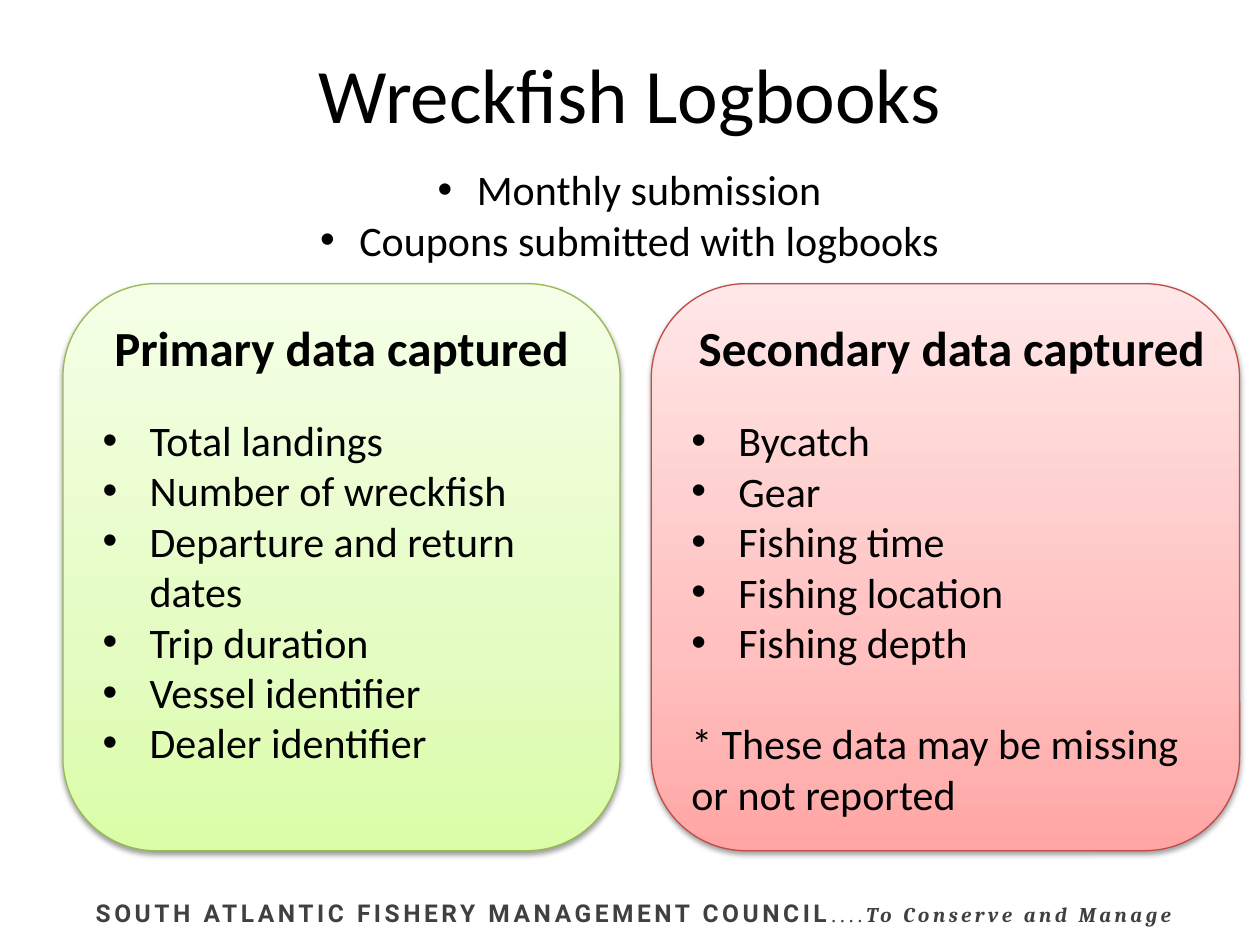
from pptx import Presentation
from pptx import util as u
from pptx.dml.color import RGBColor
from pptx.enum import shapes, text
from pptx.oxml import parse_xml
from pptx.oxml.ns import nsdecls, qn

TITLE = "Wreckfish Logbooks"
SUBMISSION = ["Monthly submission", "Coupons submitted with logbooks"]
PANELS = [
    dict(heading="Primary data captured",
         items=["Total landings", "Number of wreckfish", "Departure and return dates",
                "Trip duration", "Vessel identifier", "Dealer identifier"],
         note=None, left=1.27, width=11.23, right_inset=0.25, border="98B955",
         shades=[(0, "DAFDA7"), (35, "E4FCC2"), (100, "F5FFE7")]),
    dict(heading="Secondary data captured",
         items=["Bycatch", "Gear", "Fishing time", "Fishing location", "Fishing depth"],
         note="* These data may be missing or not reported",
         left=13.13, width=11.86, right_inset=0, border="BF4C48",
         shades=[(0, "FFA6A5"), (35, "FFC0BF"), (100, "FFE7E7")]),
]
MOTTO = [
    ("SOUTH ATLANTIC FISHERY MANAGEMENT COUNCIL", "Roboto", 14, True, False),
    ("....", "Times New Roman", 12, False, False),
    ("To Conserve and Manage", "Cambria", 12, True, True),
]
PANEL_TOP, PANEL_HEIGHT = 5.72, 11.43


def rgb(value):
    return RGBColor.from_string(value)


def box(left, top, width, height):
    return u.Cm(left), u.Cm(top), u.Cm(width), u.Cm(height)


def add_run(paragraph, words, size, font="Calibri", color="000000", bold=False, italic=False):
    run = paragraph.add_run()
    run.text = words
    run.font.name, run.font.size = font, u.Pt(size)
    run.font.bold, run.font.italic = bold, italic
    run.font.color.rgb = rgb(color)
    return run


def next_paragraph(frame, align=text.PP_ALIGN.LEFT, space=0):
    first = frame.paragraphs[0]
    paragraph = frame.add_paragraph() if first.runs else first
    paragraph.alignment = align
    if space:
        paragraph.space_before = u.Pt(space)
    return paragraph


def add_bullets(frame, items, indent, align=text.PP_ALIGN.LEFT, space=0):
    for index, item in enumerate(items):
        paragraph = next_paragraph(frame, align, 0 if index else space)
        props = paragraph._p.get_or_add_pPr()
        props.set("marL", str(u.Cm(indent)))
        props.set("indent", str(-u.Cm(indent)))
        props.append(parse_xml(f'<a:buFont {nsdecls("a")} typeface="Arial"/>'))
        props.append(parse_xml(f'<a:buChar {nsdecls("a")} char="•"/>'))
        add_run(paragraph, item, 24)


def add_text_box(slide, *place):
    frame = slide.shapes.add_textbox(*box(*place)).text_frame
    frame.word_wrap = True
    return frame


def shade(panel, shades):
    panel.fill.gradient()
    panel.fill.gradient_angle = 90
    stops = panel._element.spPr.find(f'{qn("a:gradFill")}/{qn("a:gsLst")}')
    stops[:] = [parse_xml(f'<a:gs {nsdecls("a")} pos="{percent * 1000}">'
                          f'<a:srgbClr val="{color}"/></a:gs>') for percent, color in shades]


def drop_shadow(panel):
    panel.shadow.inherit = False
    panel._element.spPr.find(qn("a:effectLst")).append(parse_xml(
        f'<a:outerShdw {nsdecls("a")} blurRad="40000" dist="20000" dir="5400000" '
        'rotWithShape="0"><a:srgbClr val="000000"><a:alpha val="38000"/>'
        '</a:srgbClr></a:outerShdw>'))


def add_panel(slide, content):
    panel = slide.shapes.add_shape(
        shapes.MSO_SHAPE.ROUNDED_RECTANGLE,
        *box(content["left"], PANEL_TOP, content["width"], PANEL_HEIGHT))
    shade(panel, content["shades"])
    panel.line.color.rgb = rgb(content["border"])
    panel.line.width = u.Pt(0.75)
    drop_shadow(panel)
    frame = panel.text_frame
    frame.word_wrap = True
    frame.vertical_anchor = text.MSO_ANCHOR.TOP
    frame.margin_right = u.Cm(content["right_inset"])
    add_run(next_paragraph(frame, text.PP_ALIGN.CENTER), content["heading"], 28, bold=True)
    add_bullets(frame, content["items"], 0.95, space=22)
    if content["note"]:
        add_run(next_paragraph(frame, space=29), content["note"], 24)


def main():
    deck = Presentation()
    deck.slide_width, deck.slide_height = u.Cm(25.4), u.Cm(19.05)
    slide = deck.slides.add_slide(deck.slide_layouts[5])

    title = slide.shapes.title
    title.left, title.top, title.width, title.height = box(1.27, 0.76, 22.86, 2.21)
    title.text_frame.vertical_anchor = text.MSO_ANCHOR.MIDDLE
    add_run(next_paragraph(title.text_frame, text.PP_ALIGN.CENTER), TITLE, 44)

    motto = next_paragraph(add_text_box(slide, 1.68, 17.98, 23.72, 0.86))
    for words, font, size, bold, italic in MOTTO:
        run = add_run(motto, words, size, font, "404040", bold, italic)
        run.font._element.set("spc", "200")

    for content in PANELS:
        add_panel(slide, content)

    add_bullets(add_text_box(slide, 2.11, 3.18, 21.16, 2.31), SUBMISSION, 0.79,
                text.PP_ALIGN.CENTER)
    deck.save("out.pptx")


if __name__ == "__main__":
    main()
